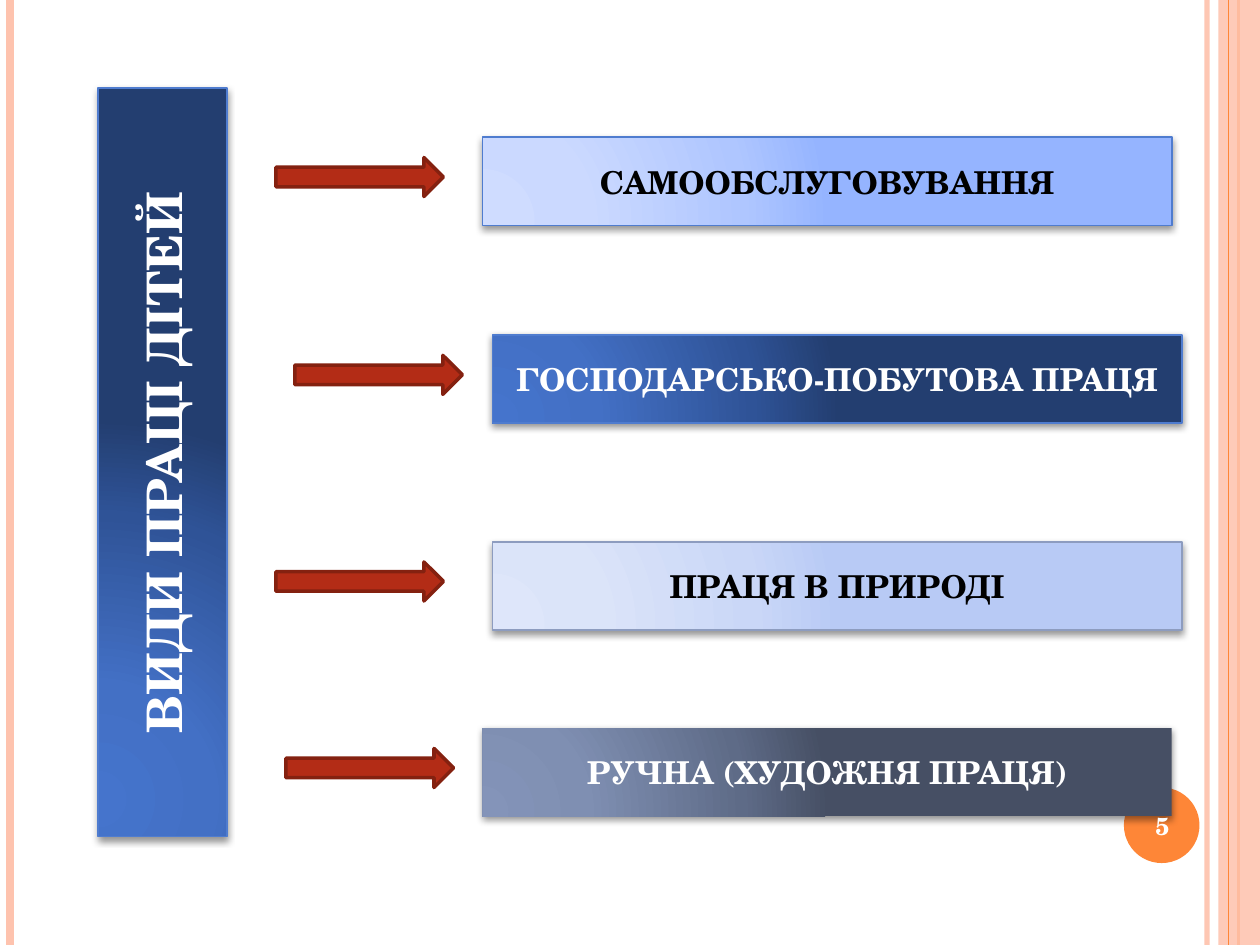
from dataclasses import dataclass

from lxml.etree import SubElement
from pptx import Presentation
from pptx.dml.color import RGBColor as RGB
from pptx.enum.shapes import MSO_CONNECTOR as LINK, MSO_SHAPE as SHAPE
from pptx.enum.text import MSO_ANCHOR as ANCHOR, PP_ALIGN as ALIGN
from pptx.oxml.ns import qn
from pptx.util import Inches, Pt


@dataclass(frozen=True)
class Theme:
    font: str = "TeX Gyre Schola"
    title: int = 28
    body: int = 18
    page: int = 14
    white: str = "FFFFFF"
    black: str = "000000"
    peach: str = "FEC3AE"
    orange: str = "FE8637"
    red: str = "B32C16"
    maroon: str = "842110"
    edge: str = "4F7CCF"
    mist: str = "8D9CBF"
    navy: tuple = ("4574CC", "4370C5", "2F5397", "233E70")
    sky: tuple = ("CFDCFF", "CBD9FF", "AFC6FF", "95B4FF")
    pale: tuple = ("DEE6FA", "DBE4F9", "CAD7F7", "B8CAF5")
    slate: tuple = ("8494B9", "7F8FB2", "5E6B87", "464F64")


T = Theme()


def node(parent, tag, **attrs):
    return SubElement(parent, qn(tag), {k: str(v) for k, v in attrs.items()})


def fade(shape, alpha):
    """Set the opacity, in percent, of the first colour of a shape."""
    color = shape._element.spPr.find(".//" + qn("a:srgbClr"))
    node(color, "a:alpha", val=alpha * 1000)


def write(shape, text, size=T.body, color=T.white, vert=None):
    frame = shape.text_frame
    frame.word_wrap = True
    frame.vertical_anchor = ANCHOR.MIDDLE
    if vert:
        frame._txBody.bodyPr.set("vert", vert)
    para = frame.paragraphs[0]
    para.alignment = ALIGN.CENTER
    run = para.add_run()
    run.text = text
    font = run.font
    font.name, font.size, font.bold = T.font, Pt(size), True
    font.color.rgb = RGB.from_string(color)


def outline(shape, color, width=1):
    if color:
        shape.line.color.rgb = RGB.from_string(color)
        shape.line.width = Pt(width)
    else:
        shape.line.fill.background()


def solid(slide, kind, box, color, edge=None, width=1):
    shape = slide.shapes.add_shape(kind, *map(Inches, box))
    shape.shadow.inherit = False
    shape.fill.solid()
    shape.fill.fore_color.rgb = RGB.from_string(color)
    outline(shape, edge, width)
    return shape


def glow(shape, colors, edge, alpha, dist):
    """Give a panel its radial gradient, outline and soft shadow."""
    shape.fill.gradient()
    props = shape._element.spPr
    grad = props.find(qn("a:gradFill"))
    for part in list(grad):
        grad.remove(part)
    stops = node(grad, "a:gsLst")
    for pos, color in zip((0, 30, 75, 100), colors):
        node(node(stops, "a:gs", pos=pos * 1000), "a:srgbClr", val=color)
    node(node(grad, "a:path", path="circle"), "a:fillToRect",
         l=5000, t=100000, r=120000, b=10000)
    outline(shape, edge)
    shape.shadow.inherit = False
    cast = node(props.find(qn("a:effectLst")), "a:outerShdw", blurRad=Pt(4),
                dist=Pt(dist), dir=5400000, rotWithShape=0)
    node(node(cast, "a:srgbClr", val=T.black), "a:alpha", val=alpha * 1000)


def stripe(slide, x, height, color, width):
    line = slide.shapes.add_connector(LINK.STRAIGHT, Inches(x), 0, Inches(x), Inches(height))
    outline(line, color, width)
    node(line._element.spPr, "a:effectLst")
    return line


def frame(slide, wide, high):
    """Draw the striped margins and the page disc."""
    fade(stripe(slide, wide - 0.42, high, T.peach, 3), 93)
    stripe(slide, 0.08, high, T.peach, 4.5)
    stripe(slide, wide - 0.17, high, T.orange, 1.5)
    fade(solid(slide, SHAPE.RECTANGLE, (wide - 0.33, 0, 0.33, high), T.peach), 87)
    stripe(slide, wide - 0.25, high, T.orange, 0.75)
    solid(slide, SHAPE.OVAL, (wide - 1.08, high - 1.25, 0.6, 0.6), T.orange)


def panel(slide, box, text, colors, edge, dark, **style):
    shape = slide.shapes.add_shape(SHAPE.RECTANGLE, *map(Inches, box))
    glow(shape, colors, edge, *((42, 1.6) if dark else (40, 2)))
    write(shape, text, color=T.white if dark else T.black, **style)


def heading(slide, box):
    panel(slide, box, "ВИДИ ПРАЦІ ДІТЕЙ", T.navy, T.edge, True,
          size=T.title, vert="vert270")


def kind_row(slide, box, shift, text, colors, edge, dark):
    """Place a panel at the right of the box and an arrow at its left."""
    x, y, wide, high = box
    panel(slide, (x + wide - 5.47, y, 5.47, high), text, colors, edge, dark)
    solid(slide, SHAPE.RIGHT_ARROW, (x + shift, y + 0.16, 1.33, 0.31), T.red, T.maroon, 2)


def page(slide, box, text):
    write(slide.shapes.add_textbox(*map(Inches, box)), text, size=T.page)


def main():
    deck = Presentation()
    deck.slide_width, deck.slide_height = Inches(10), Inches(7.5)
    slide = deck.slides.add_slide(deck.slide_layouts[6])
    frame(slide, 10, 7.5)
    heading(slide, (0.78, 0.7, 1.02, 5.94))
    rows = (
        (1.09, 9.3, 0, "САМООБСЛУГОВУВАННЯ", T.sky, T.edge, False),
        (2.66, 9.38, 0.15, "ГОСПОДАРСЬКО-ПОБУТОВА ПРАЦЯ", T.navy, T.edge, True),
        (4.3, 9.38, 0, "ПРАЦЯ В ПРИРОДІ", T.pale, T.mist, False),
        (5.78, 9.3, 0.08, "РУЧНА (ХУДОЖНЯ ПРАЦЯ)", T.slate, None, True),
    )
    left = 2.19
    for top, right, *style in rows:
        kind_row(slide, (left, top, right - left, 0.7), *style)
    page(slide, (8.89, 6.27, 0.67, 0.57), "5")
    deck.save("out.pptx")


if __name__ == "__main__":
    main()
